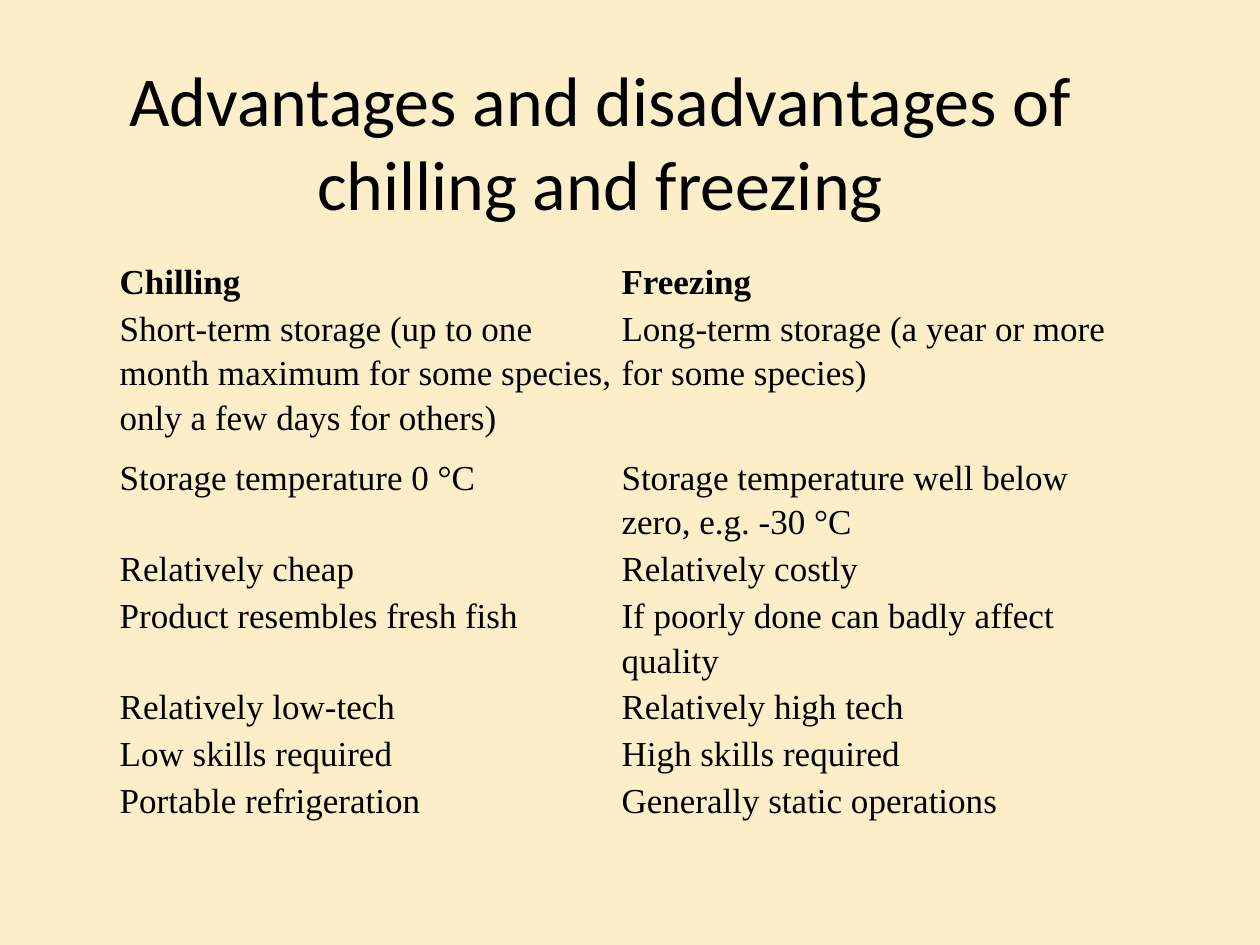
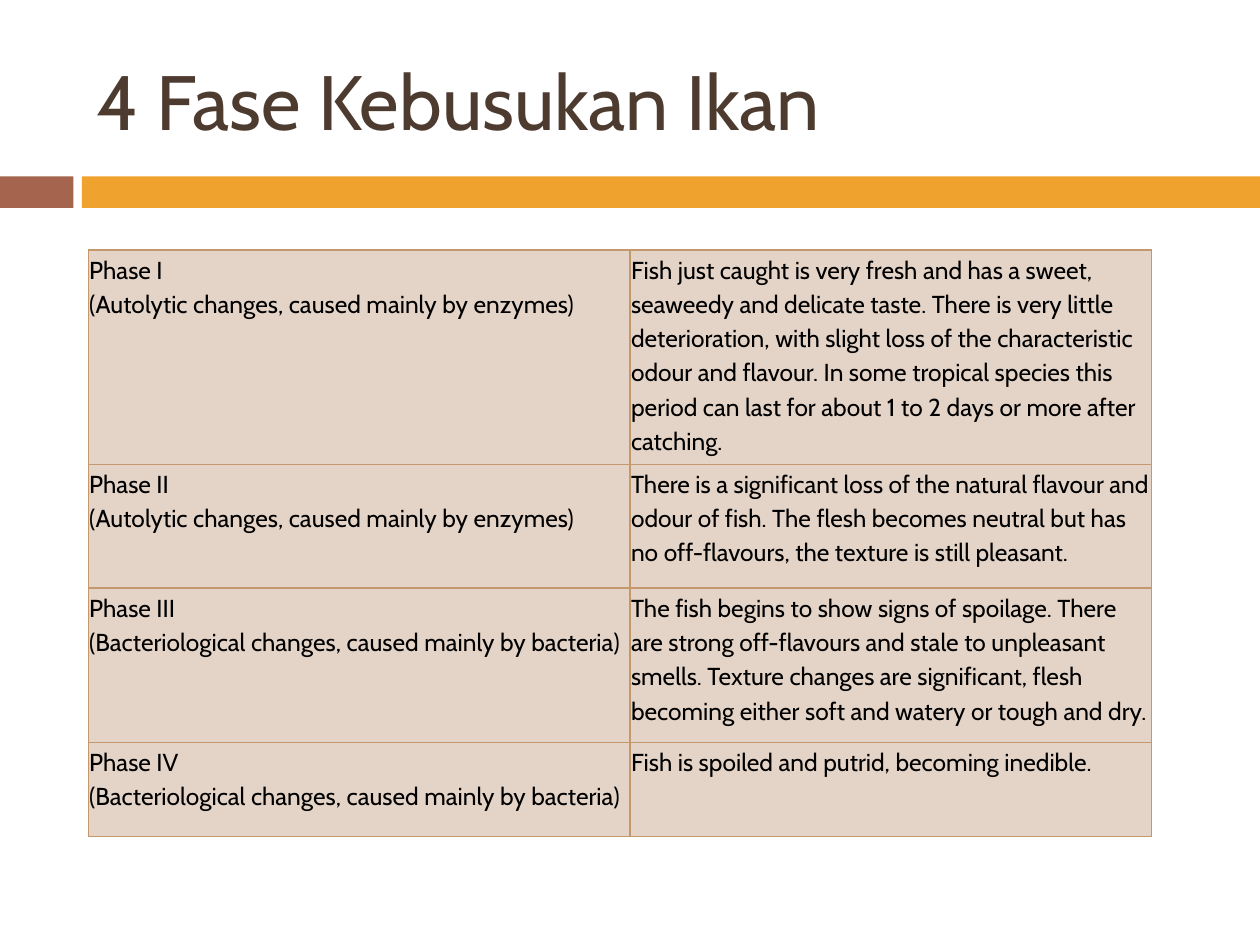
from dataclasses import dataclass

from lxml.etree import SubElement
from pptx import Presentation
from pptx.dml.color import RGBColor
from pptx.enum.shapes import MSO_SHAPE
from pptx.enum.text import MSO_ANCHOR, PP_ALIGN
from pptx.oxml.ns import qn
from pptx.util import Pt

PX = 7620  # 120 px to the inch
NO_STYLE = "{2D5ABB26-0587-4C30-8999-92F81FD0307C}"


@dataclass(frozen=True)
class Theme:
    cream: str = "FBEEC9"
    white: str = "FFFFFF"
    black: str = "000000"
    brown: str = "4E3B30"
    rust: str = "A5644E"
    amber: str = "F0A22E"
    sand: str = "E4D3C7"
    tan: str = "C3986D"
    title_plain: int = 40
    title_band: int = 44
    body_large: int = 20
    body_small: int = 14
    rule: float = 0.79


T = Theme()


def add_title(slide, text, box, font, size, color, align):
    tf = slide.shapes.add_textbox(*[n * PX for n in box]).text_frame
    tf.word_wrap = True
    tf.vertical_anchor = MSO_ANCHOR.MIDDLE
    p = tf.paragraphs[0]
    p.alignment = align
    r = p.add_run()
    r.text = text
    r.font.name, r.font.size = font, Pt(size)
    r.font.color.rgb = RGBColor.from_string(color)


def add_grid(slide, rows, left, top, widths, heights, font, size,
             bold_head=False, fill=None, border=None):
    """Add an unstyled table; a newline in a cell text is a line break."""
    gf = slide.shapes.add_table(len(rows), len(widths), left * PX, top * PX,
                                sum(widths) * PX, sum(heights) * PX)
    table = gf.table
    table.first_row = table.horz_banding = False
    table._tbl.tblPr.find(qn("a:tableStyleId")).text = NO_STYLE
    for col, width in zip(table.columns, widths):
        col.width = width * PX
    for i, (row, height) in enumerate(zip(table.rows, heights)):
        row.height = height * PX
        for cell, text in zip(row.cells, rows[i]):
            cell.margin_left = cell.margin_right = PX
            cell.margin_top = cell.margin_bottom = PX
            if border:
                tcPr = cell._tc.get_or_add_tcPr()
                for side in ("a:lnL", "a:lnR", "a:lnT", "a:lnB"):
                    ln = SubElement(tcPr, qn(side), w=str(Pt(T.rule)))
                    paint = SubElement(ln, qn("a:solidFill"))
                    SubElement(paint, qn("a:srgbClr"), val=border)
            if fill:
                cell.fill.solid()
                cell.fill.fore_color.rgb = RGBColor.from_string(fill)
            else:
                cell.fill.background()
            p = cell.text_frame.paragraphs[0]
            p.line_spacing = 1.15
            p.space_after = Pt(10)
            for n, line in enumerate(text.split("\n")):
                if n:
                    p.add_line_break()
                r = p.add_run()
                r.text = line
                r.font.name, r.font.size = font, Pt(size)
                r.font.bold = bold_head and i == 0
                r.font.color.rgb = RGBColor.from_string(T.black)


prs = Presentation()
prs.slide_width, prs.slide_height = 1200 * PX, 900 * PX
slides = []
for color in (T.cream, T.white):
    s = prs.slides.add_slide(prs.slide_layouts[6])
    s.background.fill.solid()
    s.background.fill.fore_color.rgb = RGBColor.from_string(color)
    slides.append(s)
methods, phases = slides

# Chilling against freezing
comparison = [
    ("Chilling", "Freezing"),
    ("Short-term storage (up to one month maximum for some species, "
     "only a few days for others)",
     "Long-term storage (a year or more for some species)"),
    ("Storage temperature 0 °C",
     "Storage temperature well below zero, e.g. -30 °C"),
    ("Relatively cheap", "Relatively costly"),
    ("Product resembles fresh fish",
     "If poorly done can badly affect quality"),
    ("Relatively low-tech", "Relatively high tech"),
    ("Low skills required", "High skills required"),
    ("Portable refrigeration", "Generally static operations"),
]
add_grid(methods, comparison, 113, 244, [478, 478],
         [44, 142, 87, 44, 87, 44, 44, 44],
         "Times New Roman", T.body_large, bold_head=True)
add_title(methods, "Advantages and disadvantages of chilling and freezing",
          (56, 47, 1031, 174), "Calibri", T.title_plain, T.black,
          PP_ALIGN.CENTER)

# Four phases of spoilage
for left, width, color in ((0, 70, T.rust), (78, 1122, T.amber)):
    sp = phases.shapes.add_shape(MSO_SHAPE.RECTANGLE, left * PX, 168 * PX,
                                 width * PX, 30 * PX)
    sp.shadow.inherit = False
    sp.fill.solid()
    sp.fill.fore_color.rgb = RGBColor.from_string(color)
    sp.line.fill.background()
add_title(phases, "4 Fase Kebusukan Ikan", (80, 30, 1070, 130), "Cabin",
          T.title_band, T.brown, PP_ALIGN.LEFT)

autolytic = "(Autolytic changes, caused mainly by enzymes)"
bacterial = "(Bacteriological changes, caused mainly by bacteria)"
spoilage = [
    (f"Phase I\n{autolytic}",
     "Fish just caught is very fresh and has a sweet, seaweedy and delicate "
     "taste. There is very little deterioration, with slight loss of the "
     "characteristic odour and flavour. In some tropical species this period "
     "can last for about 1 to 2 days or more after catching."),
    (f"Phase II\n{autolytic}",
     "There is a significant loss of the natural flavour and odour of fish. "
     "The flesh becomes neutral but has no off-flavours, the texture is "
     "still pleasant."),
    (f"Phase III\n{bacterial}",
     "The fish begins to show signs of spoilage. There are strong "
     "off-flavours and stale to unpleasant smells. Texture changes are "
     "significant, flesh becoming either soft and watery or tough and dry."),
    (f"Phase IV\n{bacterial}",
     "Fish is spoiled and putrid, becoming inedible."),
]
add_grid(phases, spoilage, 84, 238, [516, 497], [204, 118, 147, 90],
         "Cabin", T.body_small, fill=T.sand, border=T.tan)

prs.save("out.pptx")
